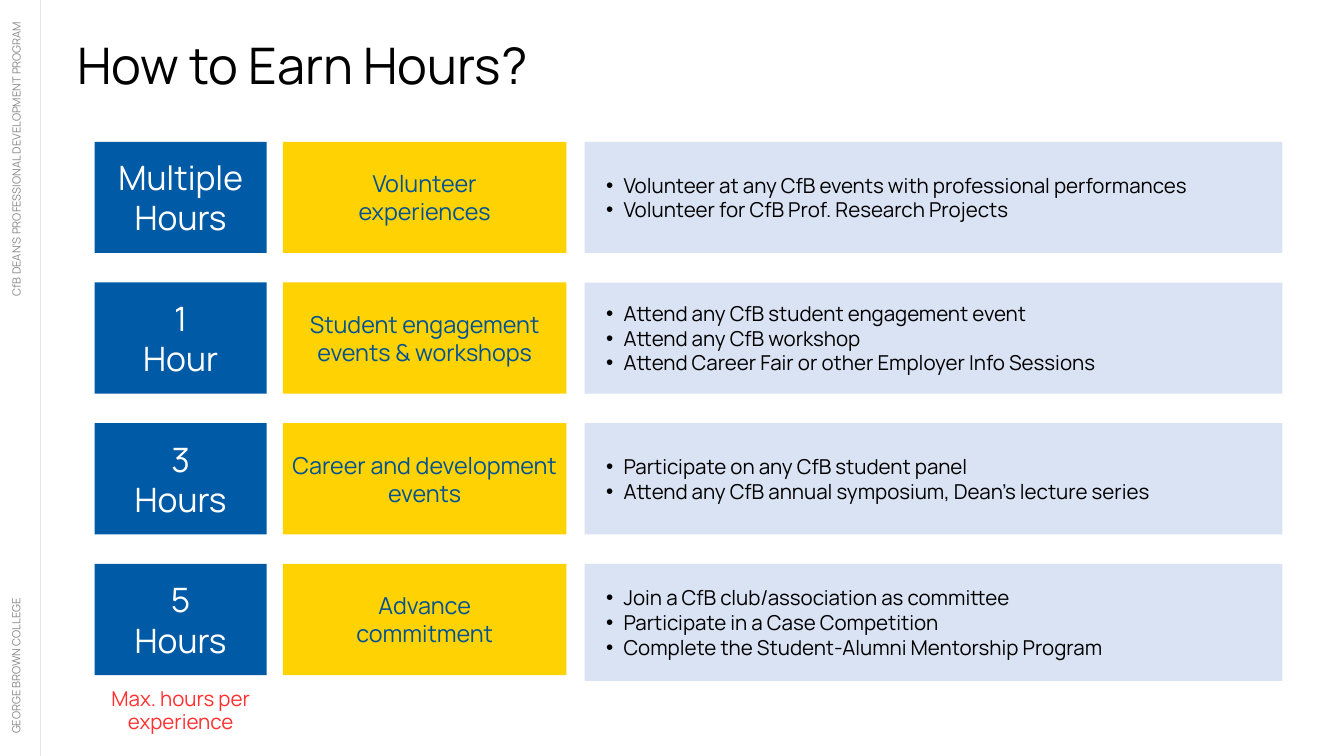
from pptx import Presentation
from pptx.dml.color import RGBColor
from pptx.enum.shapes import MSO_CONNECTOR, MSO_SHAPE
from pptx.enum.text import MSO_ANCHOR as Anchor, MSO_AUTO_SIZE as AutoSize, PP_ALIGN as Align
from pptx.oxml.ns import qn
from pptx.util import Cm, Pt
from lxml.etree import SubElement

FONT = "Manrope"
FIRST_ROW_TOP, ROW_PITCH, ROW_HEIGHT, LAST_PANEL_HEIGHT = 5.36, 5.32, 4.2, 4.42
HOURS_LEFT, HOURS_WIDTH = 3.58, 6.5
CATEGORY_LEFT, CATEGORY_WIDTH = 10.69, 10.72
ACTIVITIES_LEFT, ACTIVITIES_WIDTH = 22.1, 26.37

ROWS = [
    (["Multiple", "Hours"], ["Volunteer", "experiences"],
     ["Volunteer at any CfB events with professional performances",
      "Volunteer for CfB Prof. Research Projects"]),
    (["1", "Hour"], ["Student engagement events & workshops"],
     ["Attend any CfB student engagement event",
      "Attend any CfB workshop",
      "Attend Career Fair or other Employer Info Sessions"]),
    (["3", "Hours"], ["Career and development events"],
     ["Participate on any CfB student panel",
      "Attend any CfB annual symposium, Dean’s lecture series"]),
    (["5", "Hours"], ["Advance", "commitment"],
     ["Join a CfB club/association as committee",
      "Participate in a Case Competition",
      "Complete the Student-Alumni Mentorship Program"]),
]


def color(hex_code):
    return RGBColor.from_string(hex_code)


def place(shape, left, top, width, height):
    shape.left, shape.top = Cm(left), Cm(top)
    shape.width, shape.height = Cm(width), Cm(height)


def add_bullet(paragraph):
    properties = paragraph._p.get_or_add_pPr()
    properties.set("marL", str(Cm(1.32)))
    properties.set("indent", str(Cm(-0.66)))
    SubElement(properties, qn("a:buFont"), typeface="Arial")
    SubElement(properties, qn("a:buChar"), char="•")


def write(shape, lines, size, ink, spacing, align=Align.LEFT, anchor=Anchor.TOP,
          inset=0.0, bullets=False):
    """Fill a shape with one paragraph per line, all formatted alike."""
    frame = shape.text_frame
    frame.word_wrap = True
    frame.auto_size = AutoSize.NONE
    frame.vertical_anchor = anchor
    frame.margin_left = frame.margin_right = Cm(inset)
    frame.margin_top = frame.margin_bottom = Cm(inset)
    frame.text = "\n".join(lines)
    for paragraph in frame.paragraphs:
        paragraph.alignment = align
        paragraph.line_spacing = Pt(spacing)
        paragraph.space_before = paragraph.space_after = Pt(0)
        if bullets:
            add_bullet(paragraph)
        font = paragraph.font
        font.name, font.size, font.bold = FONT, Pt(size), False
        font.color.rgb = color(ink)


def add_label(slide, box, text, size, ink, spacing, align=Align.LEFT, rotation=0):
    label = slide.shapes.add_textbox(*map(Cm, box))
    label.rotation = rotation
    write(label, [text], size, ink, spacing, align)


def add_block(slide, box, lines, fill, size, ink, spacing):
    block = slide.shapes.add_shape(MSO_SHAPE.RECTANGLE, *map(Cm, box))
    block.shadow.inherit = False
    block.fill.solid()
    block.fill.fore_color.rgb = color(fill)
    block.line.fill.background()
    write(block, lines, size, ink, spacing, Align.CENTER, Anchor.MIDDLE, 0.15)


def fill_panel(panel, box, activities):
    place(panel, *box)
    panel.fill.solid()
    panel.fill.fore_color.rgb = color("DAE3F3")
    write(panel, activities, 22, "000000", 26.4, anchor=Anchor.MIDDLE,
          inset=0.15, bullets=True)


def add_margin_rule(slide):
    rule = slide.shapes.add_connector(MSO_CONNECTOR.STRAIGHT, Cm(1.51), Cm(0), Cm(1.51), Cm(28.58))
    rule.line.color.rgb = color("E7E6E6")
    rule.line.width = Pt(0.75)
    SubElement(rule._element.spPr, qn("a:effectLst"))


def main():
    deck = Presentation()
    deck.slide_width, deck.slide_height = Cm(50.8), Cm(28.58)
    # The comparison layout has a title and four body placeholders, one per row.
    slide = deck.slides.add_slide(deck.slide_layouts[4])
    title, *panels = slide.placeholders

    add_label(slide, (-5.23, 21.36, 11.96, 0.81), "GEORGE BROWN COLLEGE",
              12, "898989", 14.4, rotation=270)
    add_label(slide, (-5.36, 6.53, 11.96, 0.53), "CfB DEAN’S PROFESSIONAL DEVELOPMENT PROGRAM",
              12, "898989", 14.4, Align.RIGHT, rotation=270)
    add_margin_rule(slide)

    place(title, 2.92, 1.52, 46.23, 2.26)
    write(title, ["How to Earn Hours?"], 54, "000000", 58.3)

    for index, (panel, (hours, category, activities)) in enumerate(zip(panels, ROWS)):
        top = FIRST_ROW_TOP + index * ROW_PITCH
        panel_height = LAST_PANEL_HEIGHT if index == len(ROWS) - 1 else ROW_HEIGHT
        add_block(slide, (HOURS_LEFT, top, HOURS_WIDTH, ROW_HEIGHT), hours,
                  "005AA5", 36, "FFFFFF", 43.2)
        add_block(slide, (CATEGORY_LEFT, top, CATEGORY_WIDTH, ROW_HEIGHT), category,
                  "FFD204", 25, "005293", 30)
        fill_panel(panel, (ACTIVITIES_LEFT, top, ACTIVITIES_WIDTH, panel_height), activities)

    add_label(slide, (HOURS_LEFT, 26.04, HOURS_WIDTH, 1.7), "Max. hours per experience",
              22, "FF3131", 23.8, Align.CENTER)
    deck.save("out.pptx")


if __name__ == "__main__":
    main()
